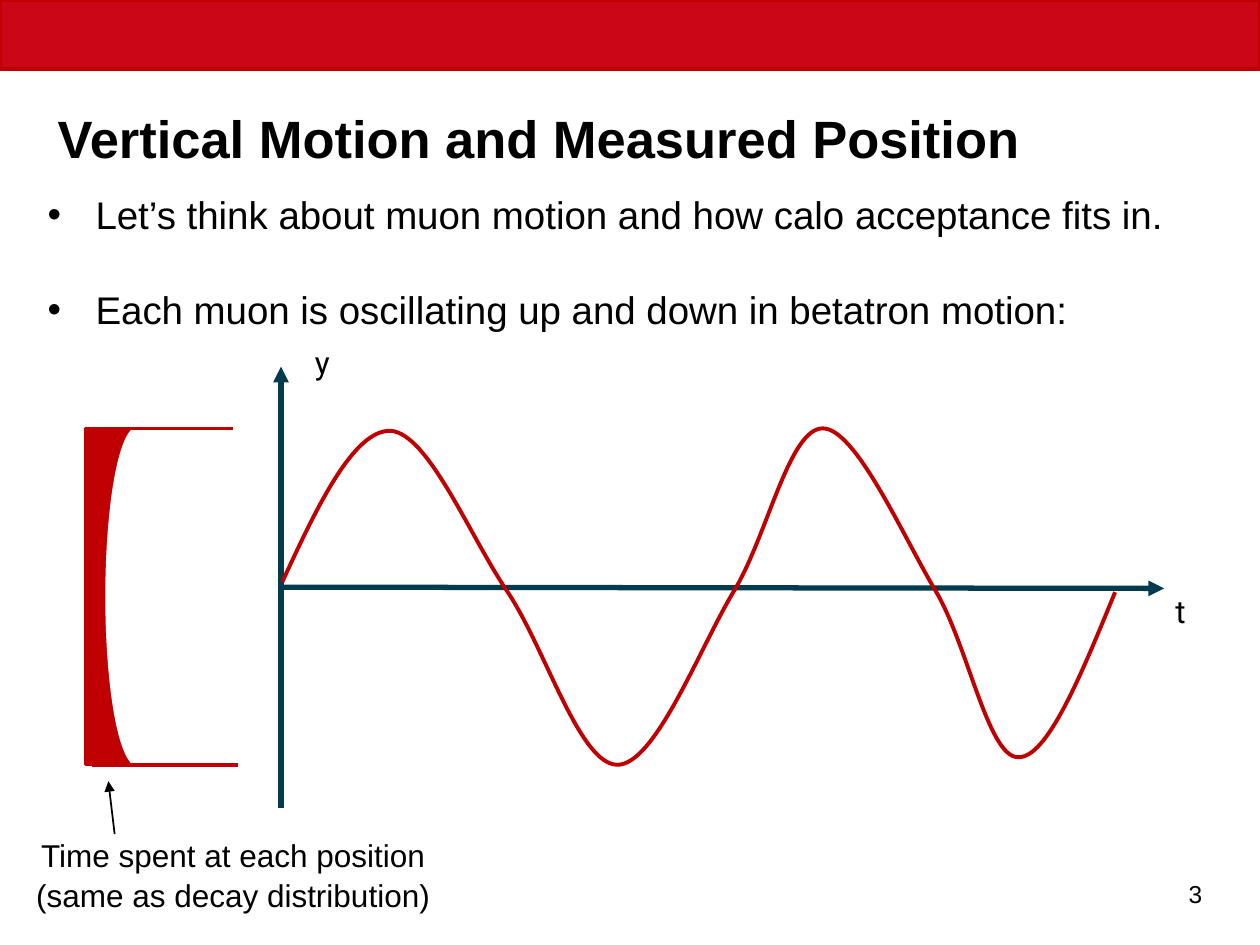
from lxml import etree
from pptx import Presentation
from pptx.dml.color import RGBColor
from pptx.enum.shapes import MSO_CONNECTOR as Connector, MSO_SHAPE as Shape
from pptx.enum.text import MSO_ANCHOR as Anchor, PP_ALIGN as Align
from pptx.oxml.ns import qn
from pptx.util import Inches, Pt

BLACK = RGBColor(0x00, 0x00, 0x00)
WHITE = RGBColor(0xFF, 0xFF, 0xFF)
BANNER_RED = RGBColor(0xCB, 0x06, 0x16)
BANNER_EDGE = RGBColor(0xBE, 0x00, 0x00)
CURVE_RED = RGBColor(0xC0, 0x00, 0x00)
AXIS_BLUE = RGBColor(0x00, 0x3B, 0x4E)

BULLET_INDENT = Inches(0.38)

# Start point, then two control points and an end point per segment
OSCILLATION = [
    (2.24, 4.62),
    (2.52, 4.01), (2.81, 3.41), (3.1, 3.42),
    (3.4, 3.44), (3.73, 4.26), (4.03, 4.7),
    (4.33, 5.15), (4.6, 6.07), (4.9, 6.07),
    (5.2, 6.07), (5.55, 5.15), (5.82, 4.7),
    (6.09, 4.26), (6.26, 3.4), (6.53, 3.4),
    (6.79, 3.4), (7.16, 4.24), (7.42, 4.68),
    (7.68, 5.11), (7.84, 6.01), (8.08, 6.01),
    (8.31, 6.02), (8.58, 5.36), (8.85, 4.7),
]


class SlideBuilder:
    def __init__(self, slide, font="Arial", color=BLACK):
        self.shapes = slide.shapes
        self.font = font
        self.color = color

    def outline(self, item, color, width):
        item.line.color.rgb = color
        item.line.width = Pt(width)

    def shape(self, kind, box, fill, edge, adjustments=()):
        item = self.shapes.add_shape(kind, *map(Inches, box))
        item.shadow.inherit = False
        item.fill.solid()
        item.fill.fore_color.rgb = fill
        self.outline(item, edge, 2)
        for index, value in enumerate(adjustments):
            item.adjustments[index] = value

    def line(self, start, end, color, width, arrow=False):
        item = self.shapes.add_connector(Connector.STRAIGHT, *map(Inches, start + end))
        self.outline(item, color, width)
        if arrow:
            etree.SubElement(item.line._get_or_add_ln(), qn("a:tailEnd"), type="triangle")
        etree.SubElement(item._element.spPr, qn("a:effectLst"))

    def curve(self, points, color, width):
        """Draw cubic segments by merging each three line steps into one curve."""
        start, *rest = [(Inches(x), Inches(y)) for x, y in points]
        outline = self.shapes.build_freeform(*start)
        outline.add_line_segments(rest, close=False)
        item = outline.convert_to_shape()
        item.shadow.inherit = False
        item.fill.background()
        self.outline(item, color, width)
        steps = list(item._element.iter(qn("a:lnTo")))
        for first in range(0, len(steps), 3):
            segment = etree.Element(qn("a:cubicBezTo"))
            steps[first].addprevious(segment)
            for step in steps[first:first + 3]:
                segment.append(step[0])
                step.getparent().remove(step)

    def text(self, box, lines, size, bullets=False, anchor=Anchor.TOP,
             paragraph_format=None, **font_format):
        frame = self.shapes.add_textbox(*map(Inches, box)).text_frame
        frame.word_wrap = True
        frame.vertical_anchor = anchor
        font_values = {"name": self.font, "size": Pt(size), **font_format}
        for index, words in enumerate(lines):
            paragraph = frame.paragraphs[0] if index == 0 else frame.add_paragraph()
            for name, value in (paragraph_format or {}).items():
                if index or name != "space_before":
                    setattr(paragraph, name, value)
            if bullets:
                self.bullet(paragraph)
            run = paragraph.add_run()
            run.text = words
            for name, value in font_values.items():
                setattr(run.font, name, value)
            run.font.color.rgb = self.color

    def bullet(self, paragraph):
        properties = paragraph._p.get_or_add_pPr()
        properties.set("marL", str(BULLET_INDENT))
        properties.set("indent", str(-BULLET_INDENT))
        etree.SubElement(properties, qn("a:buFont"), typeface=self.font)
        etree.SubElement(properties, qn("a:buChar"), char="•")


def main():
    deck = Presentation()
    deck.slide_width, deck.slide_height = Inches(10), Inches(7.5)
    page = SlideBuilder(deck.slides.add_slide(deck.slide_layouts[6]))

    page.shape(Shape.RECTANGLE, (0, 0, 10, 0.55), BANNER_RED, BANNER_EDGE)
    page.text((0.36, 0.76, 9.28, 0.63), ["Vertical Motion and Measured Position"], 30,
              anchor=Anchor.BOTTOM, bold=True)
    page.text((8.54, 6.93, 1.1, 0.52), ["3"], 14,
              paragraph_format={"alignment": Align.RIGHT})
    page.text((0.28, 1.45, 9.72, 1.21),
              ["Let’s think about muon motion and how calo acceptance fits in.",
               "Each muon is oscillating up and down in betatron motion:"],
              22, bullets=True,
              paragraph_format={"line_spacing": 1.05, "space_before": Pt(26.5)})

    # Axes and betatron oscillation
    page.line((2.23, 4.66), (9.24, 4.67), AXIS_BLUE, 3, arrow=True)
    page.line((2.23, 6.41), (2.23, 2.91), AXIS_BLUE, 3, arrow=True)
    page.text((2.4, 2.67, 0.33, 0.4), ["y"], 18, name="Roboto")
    page.text((9.23, 4.65, 0.27, 0.4), ["t"], 18, name="Roboto")
    page.curve(OSCILLATION, CURVE_RED, 2.25)

    # Distribution of time over position, between the extremes of the motion
    top, bottom = 3.4, 6.07
    height = bottom - top
    page.shape(Shape.RECTANGLE, (0.68, top, 0.37, height), CURVE_RED, CURVE_RED)
    page.shape(Shape.CHORD, (0.85, top, 0.49, height), WHITE, WHITE, (54.08, 162))
    page.line((0.68, top), (1.85, top), CURVE_RED, 2)
    page.line((0.73, bottom), (1.89, bottom), CURVE_RED, 2)
    page.text((0.15, 6.57, 3.4, 0.71),
              ["Time spent at each position", "(same as decay distribution)"], 18,
              paragraph_format={"alignment": Align.CENTER, "line_spacing": 1.05})
    page.line((0.91, 6.62), (0.86, 6.2), BLACK, 1, arrow=True)

    deck.save("out.pptx")


if __name__ == "__main__":
    main()
